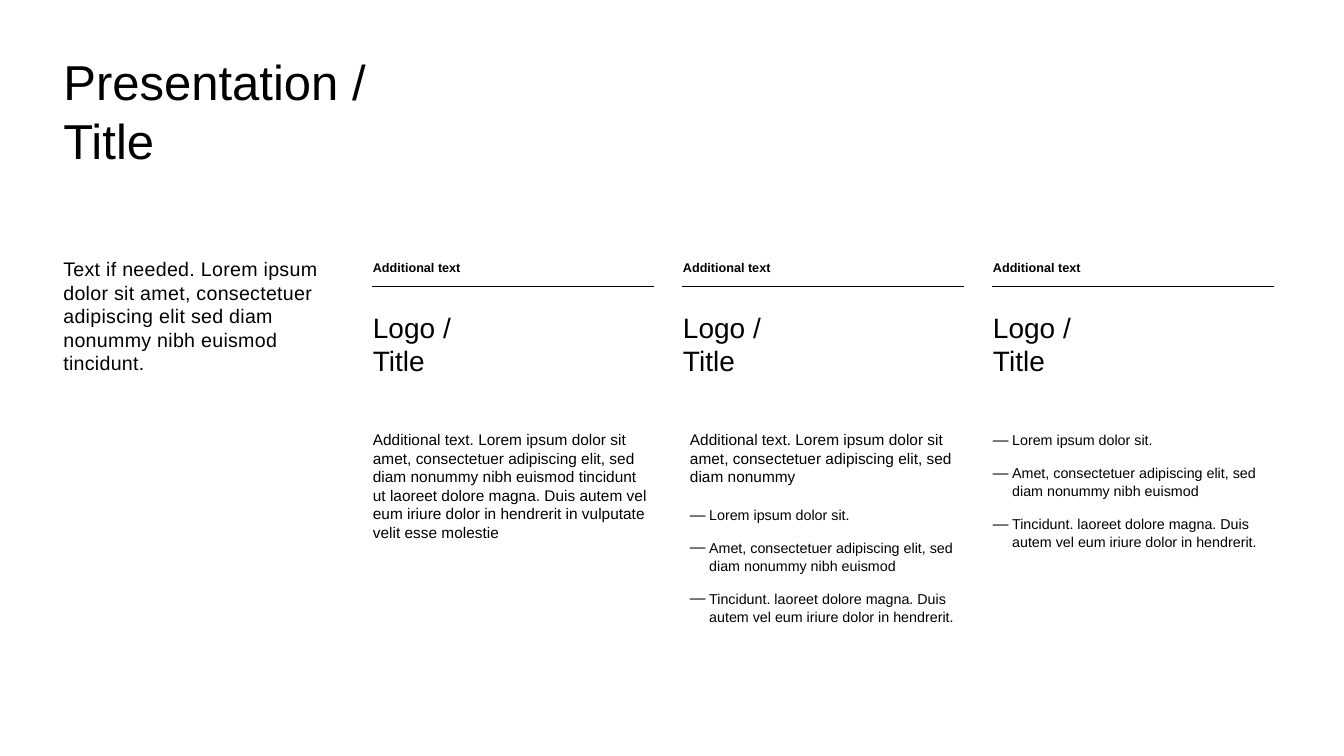
from dataclasses import dataclass

from lxml import etree
from pptx import Presentation
from pptx.dml.color import RGBColor
from pptx.enum.shapes import MSO_CONNECTOR
from pptx.enum.text import MSO_ANCHOR
from pptx.oxml.ns import qn
from pptx.util import Inches, Pt

STRAIGHT = MSO_CONNECTOR.STRAIGHT
TOP = MSO_ANCHOR.TOP


@dataclass(frozen=True)
class Style:
    size: float
    leading: object
    bold: bool = False
    tracking: int = 0
    bullet: str = ""
    space_after: float = 0


@dataclass(frozen=True)
class Theme:
    font: str = "Arial"
    ink: RGBColor = RGBColor(0, 0, 0)
    paper: RGBColor = RGBColor(255, 255, 255)
    rule: float = 1
    title: Style = Style(35, Pt(42))
    intro: Style = Style(14, Pt(16.8), tracking=20)
    label: Style = Style(9, 0.8, bold=True)
    heading: Style = Style(20, Pt(23))
    body: Style = Style(11, Pt(13.2))
    bullets: Style = Style(10.2, Pt(13.2), bullet="—", space_after=10)


THEME = Theme()
COLUMN_LEFT = 3.6
COLUMN_PITCH = (9.75 - COLUMN_LEFT) / 2
COLUMN_WIDTH = 2.99
COLUMN_TOP = 2.56
LIST_WIDTH = 2.92
LIST_HEIGHT = 1.41
LONG_TEXT = (
    "Additional text. Lorem ipsum dolor sit amet, consectetuer adipiscing elit, "
    "sed diam nonummy nibh euismod tincidunt ut laoreet dolore magna. Duis autem "
    "vel eum iriure dolor in hendrerit in vulputate velit esse molestie"
)
SHORT_TEXT = (
    "Additional text. Lorem ipsum dolor sit amet, consectetuer adipiscing elit, "
    "sed diam nonummy"
)
LIST_TEXT = "\n".join([
    "Lorem ipsum dolor sit.",
    "Amet, consectetuer adipiscing elit, sed diam nonummy nibh euismod",
    "Tincidunt. laoreet dolore magna. Duis autem vel eum iriure dolor in hendrerit.",
])
COLUMN_BODIES = [
    [((0, 1.66, 2.95, 2.14), LONG_TEXT, THEME.body)],
    [
        ((0.07, 1.66, LIST_WIDTH, 0.62), SHORT_TEXT, THEME.body),
        ((0.07, 2.4, LIST_WIDTH, LIST_HEIGHT), LIST_TEXT, THEME.bullets),
    ],
    [((0, 1.66, LIST_WIDTH, LIST_HEIGHT), LIST_TEXT, THEME.bullets)],
]


def add_bullet(para, character):
    properties = para._p.get_or_add_pPr()
    properties.set("marL", str(Inches(0.19)))
    properties.set("indent", str(-Inches(0.19)))
    etree.SubElement(properties, qn("a:buSzPct")).set("val", "110000")
    etree.SubElement(properties, qn("a:buFont")).set("typeface", THEME.font)
    etree.SubElement(properties, qn("a:buChar")).set("char", character)


def add_text(page, box, text, style):
    frame = page.shapes.add_textbox(*map(Inches, box)).text_frame
    frame.word_wrap = True
    frame.vertical_anchor = TOP
    frame.text = text
    for para in frame.paragraphs:
        if style.bullet:
            add_bullet(para, style.bullet)
        para.line_spacing = style.leading
        para.space_after = Pt(style.space_after)
        for span in para.runs:
            span.font.name = THEME.font
            span.font.size = Pt(style.size)
            span.font.bold = style.bold
            span.font.color.rgb = THEME.ink
            if style.tracking:
                span._r.get_or_add_rPr().set("spc", str(style.tracking))


def add_rule(page, left, top, width):
    rule = page.shapes.add_connector(
        STRAIGHT, Inches(left), Inches(top), Inches(left + width), Inches(top)
    )
    rule.line.color.rgb = THEME.ink
    rule.line.width = Pt(THEME.rule)
    etree.SubElement(rule._element.spPr, qn("a:effectLst"))


def add_introduction(page, left, top):
    add_text(page, (left, top, 5.35, 1.38), "Presentation /\nTitle", THEME.title)
    add_text(
        page,
        (left, top + 2.04, COLUMN_WIDTH, 1.51),
        "Text if needed. Lorem ipsum dolor sit amet, consectetuer adipiscing "
        "elit sed diam nonummy nibh euismod tincidunt.",
        THEME.intro,
    )


def add_column(page, left, top, bodies):
    add_text(page, (left, top, COLUMN_WIDTH, 0.23), "Additional text", THEME.label)
    add_rule(page, left + 0.09, top + 0.28, 2.8)
    add_text(page, (left, top + 0.49, COLUMN_WIDTH, 0.78), "Logo /\nTitle", THEME.heading)
    for (x, y, width, height), text, style in bodies:
        add_text(page, (left + x, top + y, width, height), text, style)


def main():
    deck = Presentation()
    deck.slide_width = Inches(13.33)
    deck.slide_height = Inches(7.5)
    page = deck.slides.add_slide(deck.slide_layouts[6])
    page.background.fill.solid()
    page.background.fill.fore_color.rgb = THEME.paper
    add_introduction(page, 0.53, 0.46)
    for index, bodies in enumerate(COLUMN_BODIES):
        add_column(page, COLUMN_LEFT + index * COLUMN_PITCH, COLUMN_TOP, bodies)
    deck.save("out.pptx")


if __name__ == "__main__":
    main()
